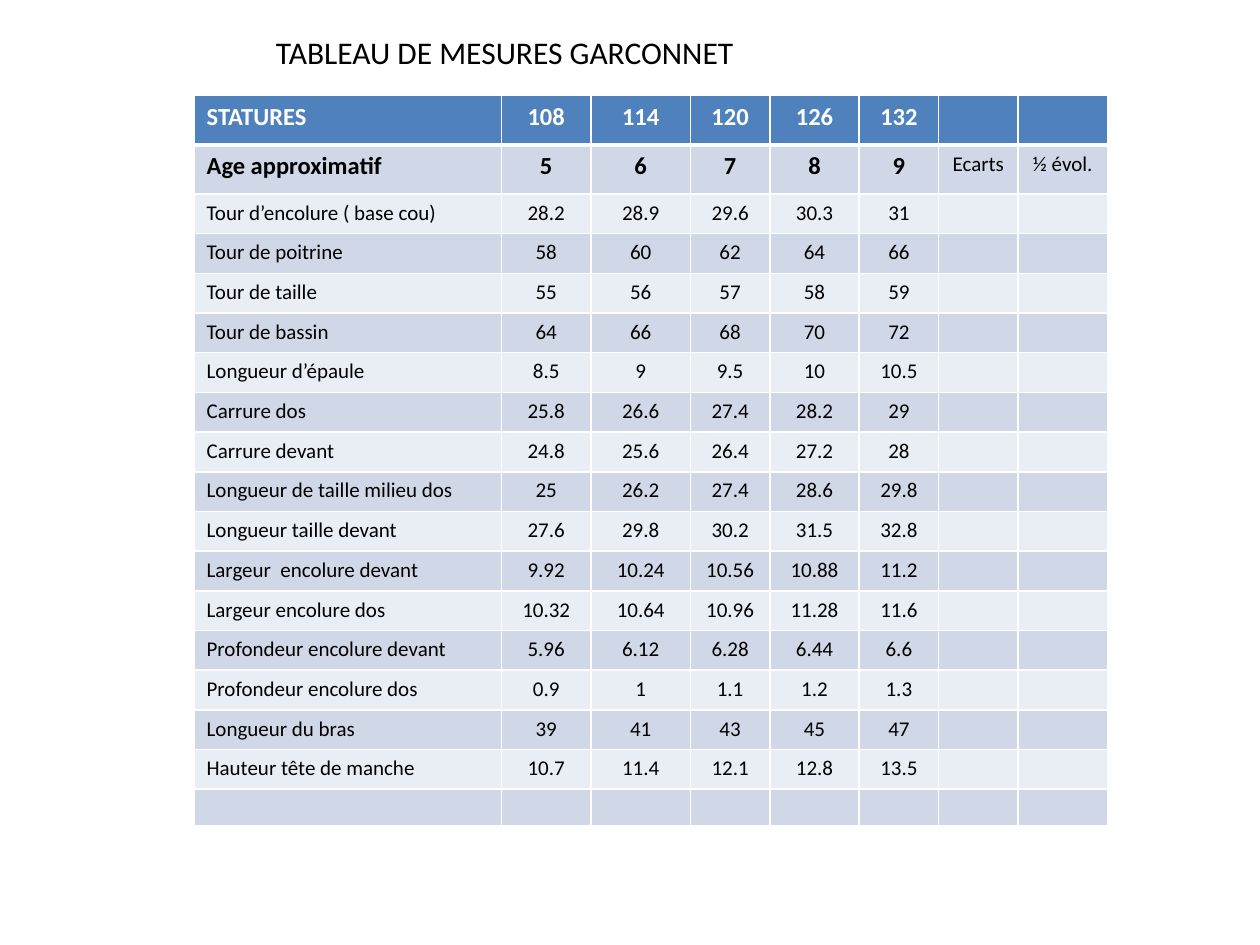
from lxml import etree
from pptx import Presentation
from pptx.dml.color import RGBColor
from pptx.enum.text import MSO_ANCHOR, MSO_AUTO_SIZE, PP_ALIGN
from pptx.oxml.ns import qn
from pptx.util import Inches, Pt

LEFT, CENTER = PP_ALIGN.LEFT, PP_ALIGN.CENTER
TOP = MSO_ANCHOR.TOP
NO_FIT = MSO_AUTO_SIZE.NONE
TITLE_ONLY = 5

COLORS = {"text": "000000", "head": "4F81BD", "white": "FFFFFF",
          "dark": "D0D8E8", "light": "E9EDF4"}

# Measures: label, then one value per size
ROWS = [
    ["STATURES", "108", "114", "120", "126", "132"],
    ["Age approximatif", "5", "6", "7", "8", "9", "Ecarts", "½ évol."],
    ["Tour d’encolure ( base cou)", "28.2", "28.9", "29.6", "30.3", "31"],
    ["Tour de poitrine", "58", "60", "62", "64", "66"],
    ["Tour de taille", "55", "56", "57", "58", "59"],
    ["Tour de bassin", "64", "66", "68", "70", "72"],
    ["Longueur d’épaule", "8.5", "9", "9.5", "10", "10.5"],
    ["Carrure dos", "25.8", "26.6", "27.4", "28.2", "29"],
    ["Carrure devant", "24.8", "25.6", "26.4", "27.2", "28"],
    ["Longueur de taille milieu dos", "25", "26.2", "27.4", "28.6", "29.8"],
    ["Longueur taille devant", "27.6", "29.8", "30.2", "31.5", "32.8"],
    ["Largeur  encolure devant", "9.92", "10.24", "10.56", "10.88", "11.2"],
    ["Largeur encolure dos", "10.32", "10.64", "10.96", "11.28", "11.6"],
    ["Profondeur encolure devant", "5.96", "6.12", "6.28", "6.44", "6.6"],
    ["Profondeur encolure dos", "0.9", "1", "1.1", "1.2", "1.3"],
    ["Longueur du bras", "39", "41", "43", "45", "47"],
    ["Hauteur tête de manche", "10.7", "11.4", "12.1", "12.8", "13.5"],
    [],
]
WIDTHS = [2.44, 0.71, 0.79, 0.63, 0.71, 0.63, 0.63, 0.71]
BODY = 4.73 / 15
HEIGHTS = [0.39] * 2 + [BODY] * 15 + [0.29]


class Sheet:
    """Holds the style and the current slide."""
    font = "Calibri"

    def __init__(self, slide):
        self.slide = slide

    def color(self, name):
        return RGBColor.from_string(COLORS[name])

    def text(self, para, words, size, color="text", bold=False, align=LEFT):
        para.alignment = align
        run = para.add_run()
        run.text = words
        run.font.name = self.font
        run.font.size = Pt(size)
        run.font.bold = bold
        run.font.color.rgb = self.color(color)

    def title(self, words, left, top, width, height):
        box = self.slide.shapes.title
        box.left, box.top = Inches(left), Inches(top)
        box.width, box.height = Inches(width), Inches(height)
        frame = box.text_frame
        frame.word_wrap = True
        frame.auto_size = NO_FIT
        frame.vertical_anchor = TOP
        self.text(frame.paragraphs[0], words, 18)

    def border(self, cell, widths):
        props = cell._tc.get_or_add_tcPr()
        for side, width in zip("LRTB", widths):
            line = etree.SubElement(props, qn(f"a:ln{side}"), w=str(Pt(width)))
            fill = etree.SubElement(line, qn("a:solidFill"))
            etree.SubElement(fill, qn("a:srgbClr"), val=COLORS["white"])

    def cell(self, cell, words, row, col):
        # White grid with a thick rule under the header
        self.border(cell, (1, 1, 3 if row == 1 else 1, 3 if row == 0 else 1))
        cell.fill.solid()
        band = "dark" if row % 2 else "light"
        cell.fill.fore_color.rgb = self.color("head" if row == 0 else band)
        para = cell.text_frame.paragraphs[0]
        if words:
            bold = row < 2 and col < 6
            self.text(para, words, 14 if bold else 12,
                      "text" if row else "white", bold,
                      CENTER if col else LEFT)
        else:
            # Keep empty cells from stretching their row
            etree.SubElement(para._p, qn("a:endParaRPr"), sz="1100")

    def table(self, rows, left, top, widths, heights):
        table = self.slide.shapes.add_table(
            len(rows), len(widths), Inches(left), Inches(top),
            Inches(sum(widths)), Inches(sum(heights))).table
        for col, width in zip(table.columns, widths):
            col.width = Inches(width)
        for r, (values, height) in enumerate(zip(rows, heights)):
            table.rows[r].height = Inches(height)
            for c in range(len(widths)):
                words = values[c] if c < len(values) else ""
                self.cell(table.cell(r, c), words, r, c)


def main():
    deck = Presentation()
    deck.slide_width, deck.slide_height = Inches(10), Inches(7.5)
    sheet = Sheet(deck.slides.add_slide(deck.slide_layouts[TITLE_ONLY]))

    # Heading and table of measures
    sheet.title("TABLEAU DE MESURES GARCONNET", 2.09, 0.21, 5.91, 0.4)
    sheet.table(ROWS, 1.54, 0.76, WIDTHS, HEIGHTS)
    deck.save("out.pptx")


if __name__ == "__main__":
    main()
